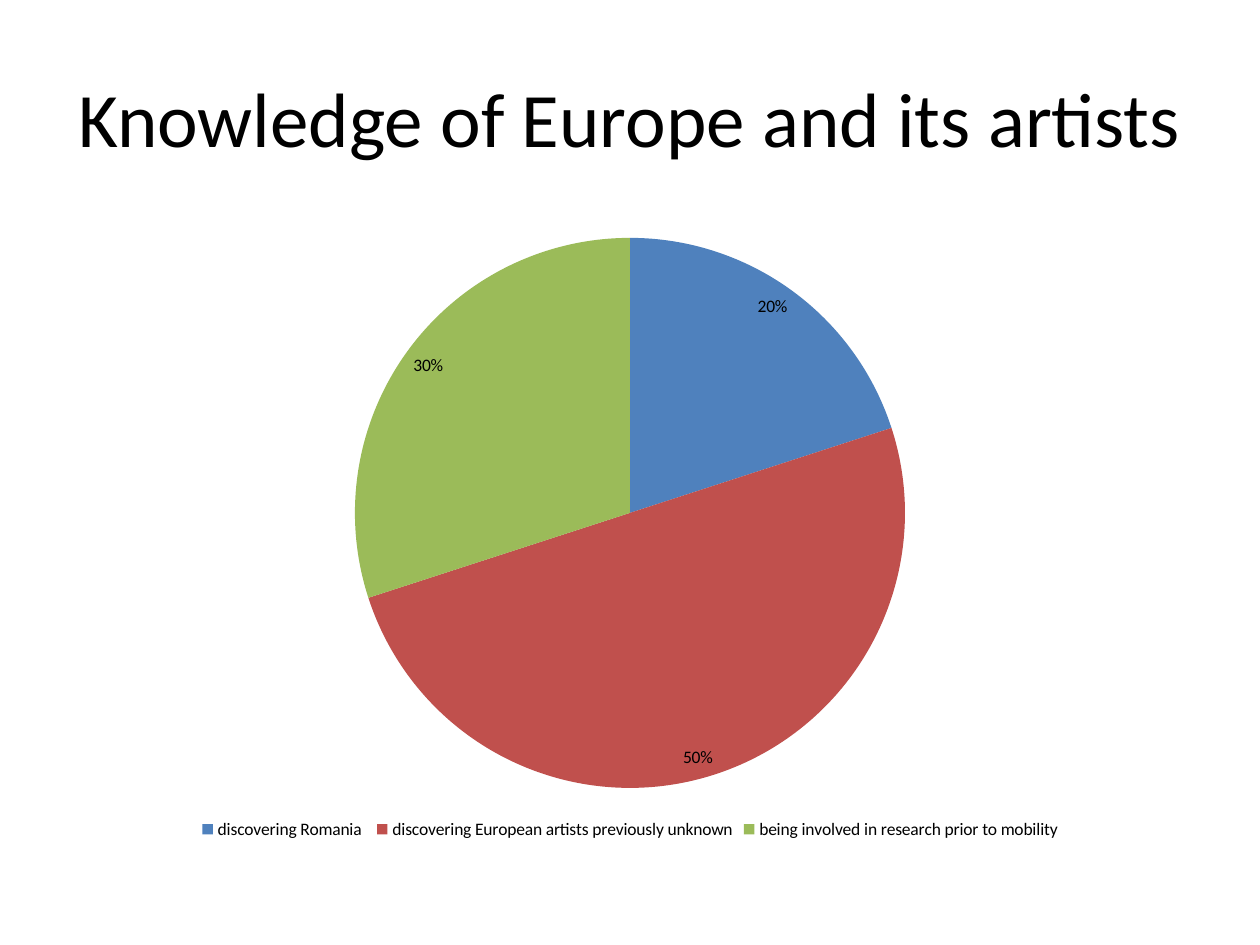
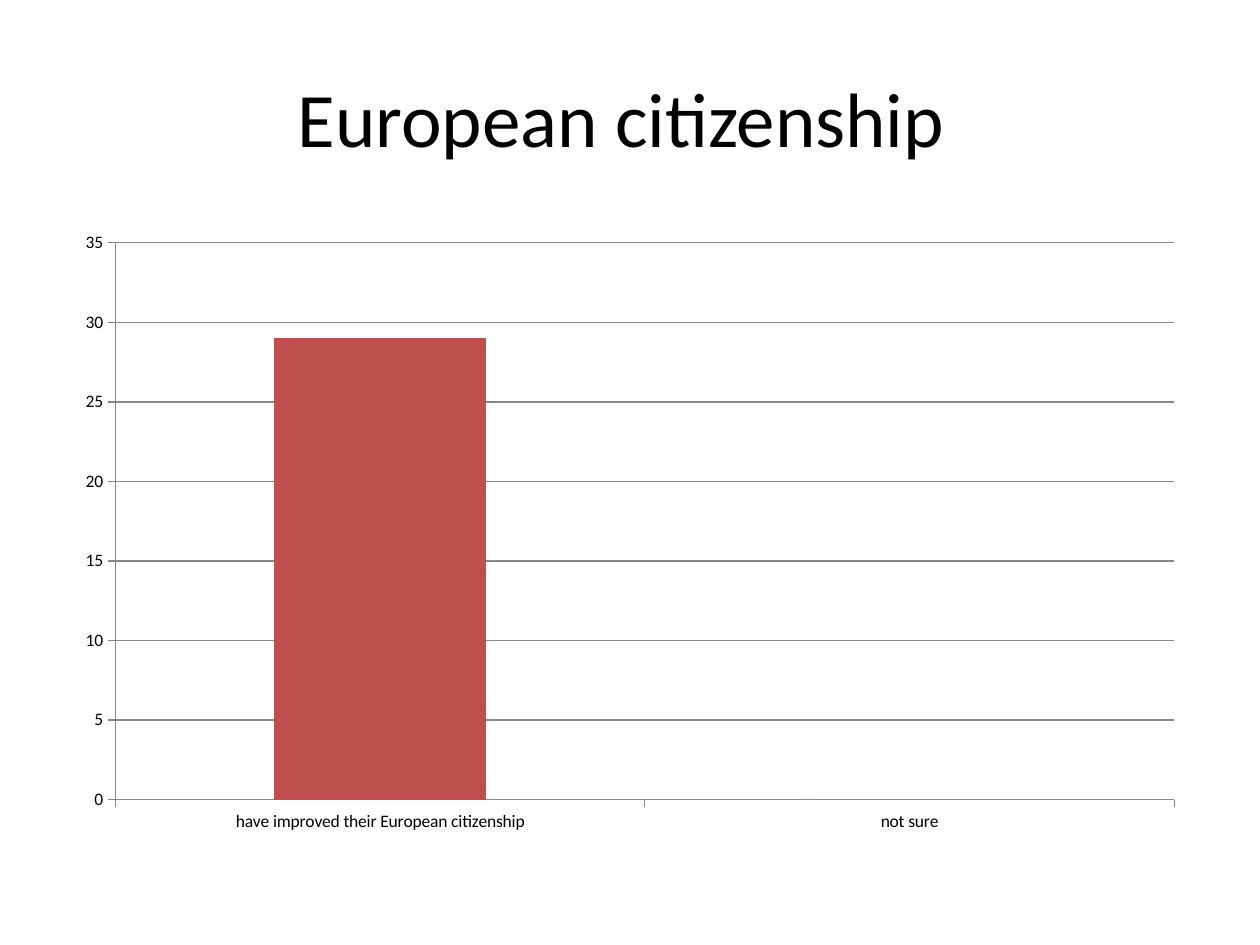
from dataclasses import dataclass

from pptx import Presentation
from pptx.chart.data import CategoryChartData
from pptx.dml.color import RGBColor
from pptx.enum.chart import XL_CHART_TYPE as ChartType
from pptx.enum.chart import XL_LABEL_POSITION as LabelPosition
from pptx.enum.chart import XL_LEGEND_POSITION as LegendPosition
from pptx.enum.chart import XL_TICK_MARK as TickMark
from pptx.enum.text import MSO_ANCHOR as Anchor
from pptx.enum.text import PP_ALIGN as Align
from pptx.util import Pt


@dataclass(frozen=True)
class Theme:
    font: str = "Calibri"
    text: RGBColor = RGBColor(0x00, 0x00, 0x00)
    blue: RGBColor = RGBColor(0x4F, 0x81, 0xBD)
    red: RGBColor = RGBColor(0xC0, 0x50, 0x4D)
    green: RGBColor = RGBColor(0x9B, 0xBB, 0x59)
    axis: RGBColor = RGBColor(0x86, 0x86, 0x86)
    title_size: Pt = Pt(44)
    chart_size: Pt = Pt(10)


theme = Theme()
LEFT, WIDTH = Pt(36), Pt(648)

presentation = Presentation()
presentation.slide_width = Pt(720)
presentation.slide_height = Pt(540)


def style_font(font, size):
    font.name = theme.font
    font.size = size
    font.color.rgb = theme.text


def add_chart_slide(title, chart_type, values):
    """Add a titled slide with one chart of the category-to-value pairs; return the chart."""
    slide = presentation.slides.add_slide(presentation.slide_layouts[6])
    frame = slide.shapes.add_textbox(LEFT, Pt(21.6), WIDTH, Pt(90)).text_frame
    frame.word_wrap = True
    frame.vertical_anchor = Anchor.MIDDLE
    paragraph = frame.paragraphs[0]
    paragraph.text = title
    paragraph.alignment = Align.CENTER
    style_font(paragraph.font, theme.title_size)

    data = CategoryChartData()
    data.categories = values.keys()
    data.add_series("Series 1", values.values())
    chart = slide.shapes.add_chart(
        chart_type, LEFT, Pt(126), WIDTH, Pt(356.4), data
    ).chart
    chart.has_title = False
    chart.has_legend = False
    style_font(chart.font, theme.chart_size)
    return chart


# Slide 1: shares of the answers
knowledge_chart = add_chart_slide(
    "Knowledge of Europe and its artists",
    ChartType.PIE,
    {
        "discovering Romania ": 20,
        "discovering European artists previously unknown": 50,
        "being involved in research prior to mobility": 30,
    },
)
knowledge_chart.has_legend = True
knowledge_chart.legend.position = LegendPosition.BOTTOM
knowledge_chart.legend.include_in_layout = False

pie = knowledge_chart.plots[0]
pie.vary_by_categories = True
for index, color in enumerate((theme.blue, theme.red, theme.green)):
    fill = pie.series[0].points[index].format.fill
    fill.solid()
    fill.fore_color.rgb = color

pie.has_data_labels = True
labels = pie.data_labels
labels.show_value = False
labels.show_percentage = True
labels.number_format = "0%"
labels.number_format_is_linked = False
labels.position = LabelPosition.INSIDE_END

# Slide 2: number of answers
citizenship_chart = add_chart_slide(
    "European citizenship ",
    ChartType.COLUMN_CLUSTERED,
    {"have improved their European citizenship": 29, "not sure": 0},
)
columns = citizenship_chart.plots[0]
columns.vary_by_categories = False
columns.gap_width = 150
series = columns.series[0]
for item, color in ((series, theme.blue), (series.points[0], theme.red)):
    item.format.fill.solid()
    item.format.fill.fore_color.rgb = color

value_axis = citizenship_chart.value_axis
value_axis.minimum_scale = 0
value_axis.maximum_scale = 35
value_axis.major_unit = 5
value_axis.has_major_gridlines = True
category_axis = citizenship_chart.category_axis
for axis in (value_axis, category_axis):
    axis.major_tick_mark = TickMark.OUTSIDE
    axis.minor_tick_mark = TickMark.NONE
for ruled in (value_axis, category_axis, value_axis.major_gridlines):
    ruled.format.line.color.rgb = theme.axis
    ruled.format.line.width = Pt(0.75)

presentation.save("out.pptx")
